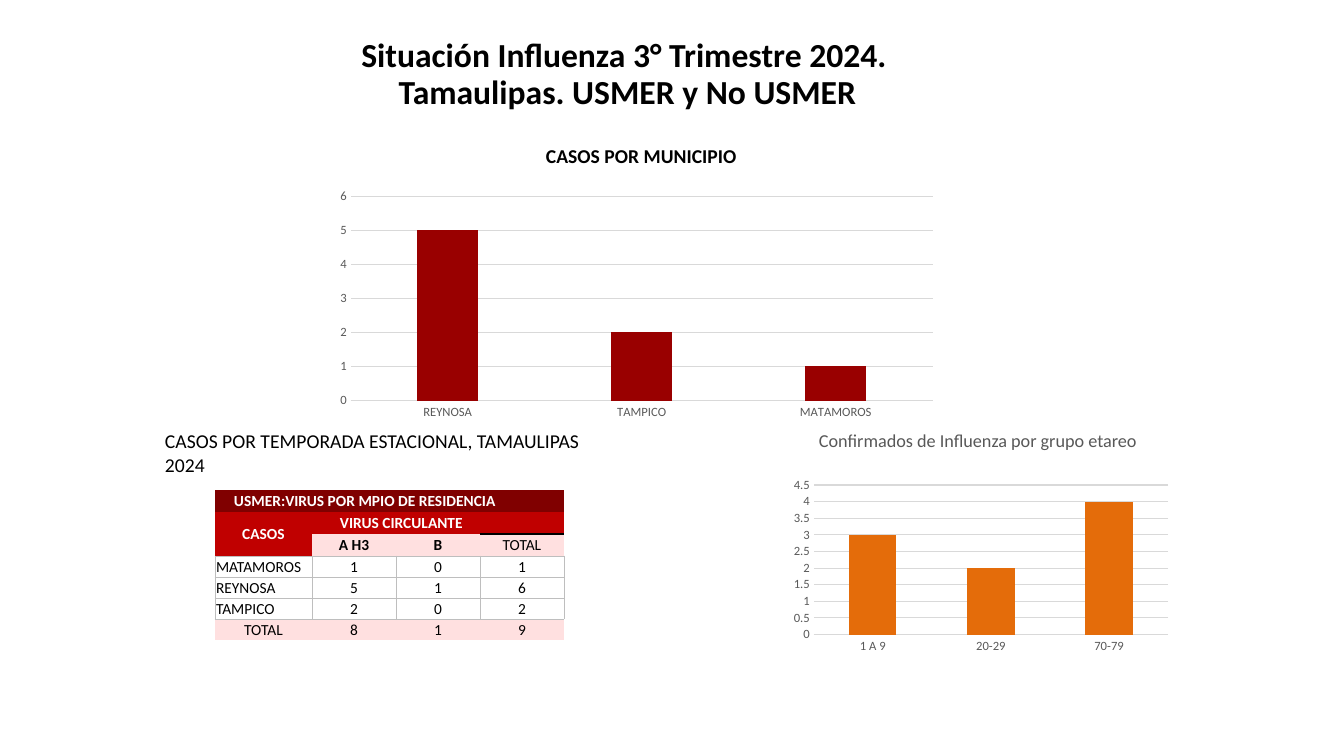
"""Build the slide on influenza cases in Tamaulipas, third quarter of 2024."""
from lxml import etree
from pptx import Presentation
from pptx import util as u
from pptx.chart.data import CategoryChartData
from pptx.dml.color import RGBColor
from pptx.enum import chart as charts, text
from pptx.oxml import ns

SCALE = 12192000 / 1344
FONT = "Calibri"
BLACK = RGBColor(0x00, 0x00, 0x00)
WHITE = RGBColor(0xFF, 0xFF, 0xFF)
CAPTION_GREY = RGBColor(0x58, 0x58, 0x58)
AXIS_GREY = RGBColor(0x59, 0x59, 0x59)
GRID_GREY = RGBColor(0xD9, 0xD9, 0xD9)
BORDER_GREY = RGBColor(0xBE, 0xBE, 0xBE)
MAROON = RGBColor(0x80, 0x00, 0x00)
RED = RGBColor(0xC0, 0x00, 0x00)
PINK = RGBColor(0xFF, 0xE0, 0xE0)
BAR_RED = RGBColor(0x99, 0x00, 0x00)
BAR_ORANGE = RGBColor(0xE4, 0x6C, 0x0A)

COLUMN_WIDTHS = [97, 84, 84, 84]
ROW_HEIGHTS = [22, 22, 22, 21, 21, 21, 21]
CASES = [
    ["USMER:VIRUS POR MPIO DE RESIDENCIA", "", "", ""],
    ["CASOS", "VIRUS CIRCULANTE", "", ""],
    ["", "A H3", "B", "TOTAL"],
    ["MATAMOROS", "1", "0", "1"],
    ["REYNOSA", "5", "1", "6"],
    ["TAMPICO", "2", "0", "2"],
    ["TOTAL", "8", "1", "9"],
]
ROW_FILLS = [MAROON, RED, PINK, None, None, None, PINK]
BODY_ROWS = range(3, 6)
LEFT_INSETS = {(0, 0): 19, (1, 1): 28}


def px(length):
    """Turn pixels into EMU."""
    return u.Emu(round(length * SCALE))


def style_font(font, size, color, bold=False):
    """Set the face, size, colour and weight of a font."""
    font.name, font.size, font.bold = FONT, u.Pt(size), bold
    font.color.rgb = color


def set_insets(target, left=0, top=0, right=0, bottom=0):
    """Set the four insets of a text frame or a table cell."""
    target.margin_left, target.margin_top = px(left), px(top)
    target.margin_right, target.margin_bottom = px(right), px(bottom)


def set_title(slide, lines):
    """Place the title and write its centred lines."""
    title = slide.shapes.title
    title.left, title.top, title.width, title.height = map(px, (360, 36, 528, 78))
    frame = title.text_frame
    frame.auto_size = text.MSO_AUTO_SIZE.NONE
    frame.vertical_anchor = text.MSO_ANCHOR.TOP
    set_insets(frame, top=1)
    frame.text = "\n".join(lines)
    for paragraph in frame.paragraphs:
        paragraph.alignment = text.PP_ALIGN.CENTER
        paragraph.line_spacing = u.Pt(26.6)
        style_font(paragraph.font, 24, BLACK, True)
    frame.paragraphs[-1]._p.get_or_add_pPr().set("marL", str(px(7)))


def add_caption(slide, box, words, size, color, bold=False, top=23, right=0):
    """Add a heading above a chart or the table."""
    frame = slide.shapes.add_textbox(*map(px, box)).text_frame
    frame.word_wrap = True
    set_insets(frame, left=1, top=top, right=right)
    paragraph = frame.paragraphs[0]
    paragraph.text = words
    style_font(paragraph.font, size, color, bold)


def add_column_chart(slide, box, kind, cases, color, gap, overlap, maximum, step):
    """Add a one-series column chart of cases by category."""
    data = CategoryChartData()
    data.categories = list(cases)
    data.add_series("Casos", cases.values())
    chart = slide.shapes.add_chart(kind, *map(px, box), data).chart
    chart.has_legend = chart.has_title = False
    style_font(chart.font, 10, BLACK)
    plot = chart.plots[0]
    plot.vary_by_categories = False
    plot.gap_width, plot.overlap = gap, overlap
    fill = plot.series[0].format.fill
    fill.solid()
    fill.fore_color.rgb = color
    values = chart.value_axis
    values.minimum_scale, values.maximum_scale, values.major_unit = 0, maximum, step
    values.format.line.fill.background()
    for axis in (chart.category_axis, values):
        axis.major_tick_mark = axis.minor_tick_mark = charts.XL_TICK_MARK.NONE
        style_font(axis.tick_labels.font, 9, AXIS_GREY)
    for line in (chart.category_axis.format.line, values.major_gridlines.format.line):
        line.color.rgb = GRID_GREY
        line.width = u.Pt(0.75)


def set_borders(cell, borders):
    """Draw the given sides of a cell as (colour, points) and clear the others."""
    properties = cell._tc.get_or_add_tcPr()
    for side in "LRTB":
        line = etree.SubElement(properties, ns.qn("a:ln" + side))
        if side in borders:
            color, points = borders[side]
            line.set("w", str(u.Pt(points)))
            fill = etree.SubElement(line, ns.qn("a:solidFill"))
            etree.SubElement(fill, ns.qn("a:srgbClr"), val=str(color))
        else:
            etree.SubElement(line, ns.qn("a:noFill"))


def cell_borders(row, column):
    """Give the visible borders of one cell of the case table."""
    if row in BODY_ROWS:
        sides = "LRTB"
    elif row == 2 or (row, column) == (1, 0):
        sides = "B"
    else:
        sides = "T" if row == 6 else ""
    borders = {side: (BORDER_GREY, 0.5) for side in sides}
    if (row, column) == (2, 3):
        borders["T"] = (BLACK, 1)
    return borders


def fill_cell(cell, row, column):
    """Write and format one cell of the case table."""
    set_borders(cell, cell_borders(row, column))
    color = RED if (row, column) == (2, 0) else ROW_FILLS[row]
    if color is None:
        cell.fill.background()
    else:
        cell.fill.solid()
        cell.fill.fore_color.rgb = color
    cell.vertical_anchor = text.MSO_ANCHOR.MIDDLE
    inset = LEFT_INSETS.get((row, column), 1)
    set_insets(cell, left=inset, top=1, right=1)
    paragraph = cell.text_frame.paragraphs[0]
    paragraph.text = CASES[row][column]
    leftward = inset > 1 or (row in BODY_ROWS and column == 0)
    paragraph.alignment = text.PP_ALIGN.LEFT if leftward else text.PP_ALIGN.CENTER
    bold = row < 2 or (row == 2 and column < 3)
    style_font(paragraph.font, 11, WHITE if row < 2 else BLACK, bold)


def add_case_table(slide, left, top):
    """Add the table of cases by municipality and virus."""
    box = map(px, (left, top, sum(COLUMN_WIDTHS), sum(ROW_HEIGHTS)))
    table = slide.shapes.add_table(len(ROW_HEIGHTS), len(COLUMN_WIDTHS), *box).table
    table.first_row = table.horz_banding = False
    for column, width in zip(table.columns, COLUMN_WIDTHS):
        column.width = px(width)
    for row, height in zip(table.rows, ROW_HEIGHTS):
        row.height = px(height)
    for row in range(len(ROW_HEIGHTS)):
        for column in range(len(COLUMN_WIDTHS)):
            fill_cell(table.cell(row, column), row, column)
    for first, last in (((0, 0), (0, 3)), ((1, 0), (2, 0)), ((1, 1), (1, 3))):
        table.cell(*first).merge(table.cell(*last))


def main():
    """Build and save the slide."""
    presentation = Presentation()
    presentation.slide_width, presentation.slide_height = px(1344), px(756)
    slide = presentation.slides.add_slide(presentation.slide_layouts[5])
    set_title(slide, ["Situación Influenza 3° Trimestre 2024.",
                      "Tamaulipas. USMER y No USMER"])
    add_caption(slide, (164, 406, 461, 45),
                "CASOS POR TEMPORADA ESTACIONAL, TAMAULIPAS 2024", 14, BLACK, right=24)
    add_caption(slide, (818, 427, 327, 25),
                "Confirmados de Influenza por grupo etareo", 13, CAPTION_GREY, top=2)
    add_case_table(slide, 215, 490)
    add_caption(slide, (545, 121, 274, 45), "CASOS POR MUNICIPIO", 14, BLACK, bold=True)
    add_column_chart(slide, (328, 184, 617, 240), charts.XL_CHART_TYPE.COLUMN_CLUSTERED,
                     {"REYNOSA": 5, "TAMPICO": 2, "MATAMOROS": 1},
                     BAR_RED, 219, -27, 6, 1)
    add_column_chart(slide, (786, 474, 390, 183), charts.XL_CHART_TYPE.COLUMN_STACKED,
                     {"1 A 9": 3, "20-29": 2, "70-79": 4},
                     BAR_ORANGE, 150, 100, 4.5, 0.5)
    presentation.save("out.pptx")


if __name__ == "__main__":
    main()
